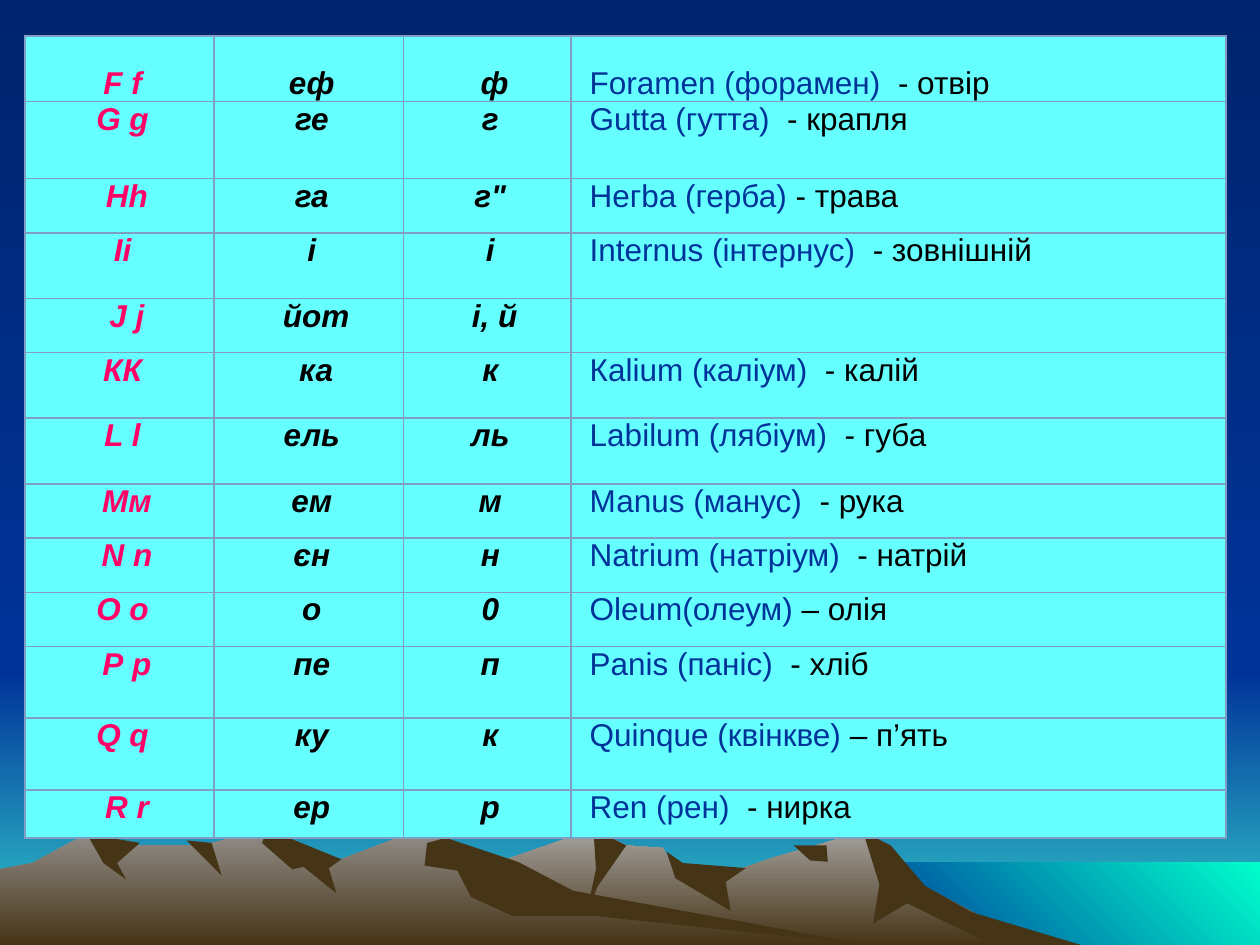
from lxml import etree
from pptx import Presentation
from pptx.dml.color import RGBColor
from pptx.enum import shapes, text
from pptx.oxml.ns import qn
from pptx.util import Pt

COLORS = {
    "night": "00246D", "blue": "003399", "horizon": "33CCCC", "lagoon": "00FFCC",
    "mist": "A5A29F", "stone": "938F8B", "earth": "463416",
    "cell": "66FFFF", "border": "809EC2", "letter": "FF0066", "ink": "000000",
}
GRID_UNIT = Pt(0.72)
DOWN, UP_RIGHT = 270, 45

RIDGES = [
    (("mist", "earth"), [
        (258, 100), (327, 59), (405, 31), (471, 8), (497, 21), (526, 23), (536, 40), (566, 47),
        (613, 31), (685, 10), (723, 48), (821, 100)]),
    (("earth",), [
        (685, 10), (698, 52), (693, 83), (720, 67), (788, 100), (858, 100), (771, 74), (734, 53),
        (707, 21)]),
    (("earth",), [(471, 8), (473, 40), (465, 77), (474, 54), (497, 21)]),
    (("earth",), [(529, 26), (536, 47), (580, 73), (576, 50), (592, 39), (542, 35)]),
    (("earth",), [(630, 21), (643, 33), (657, 34), (656, 21)]),
    (("stone", "earth"), [
        (0, 100), (0, 40), (26, 35), (68, 12), (94, 21), (160, 21), (212, 8), (236, 31),
        (271, 32), (318, 14), (354, 15), (432, 62), (690, 100)]),
    (("earth",), [(208, 19), (232, 40), (241, 38), (267, 59), (261, 39), (271, 32), (212, 8)]),
    (("earth",), [
        (339, 19), (337, 37), (363, 41), (374, 62), (407, 77), (472, 77), (690, 100), (455, 57),
        (411, 34), (354, 15)]),
    (("earth",), [(148, 17), (176, 45), (168, 19)]),
    (("earth",), [(77, 26), (82, 35), (100, 48), (93, 35), (111, 19), (69, 12)]),
]

COLUMNS = [108, 108.3, 95.7, 374.3]
HEIGHTS = {"low": 27.5, "normal": 31, "high": 37.5, "tall": 41, "top": 44}
LETTERS = [
    ("high", "F f ", "еф ", "ф", "Foramen (форамен)", "  - отвір"),
    ("top", "G g ", "ге ", "г ", "Gutta (гутта)", "  - крапля"),
    ("normal", "Нh", "га ", "г\" ", "Негbа (герба)", " - трава"),
    ("high", "Іі ", "і ", "і ", "Internus (інтернус)", "  - зовнішній"),
    ("normal", "J j", "йот", "і, й", "", ""),
    ("high", "КК ", "ка", "к ", "Каlium (каліум)", "  - калій"),
    ("high", "L l ", "ель ", "ль ", "Labilum (лябіум)", "  - губа"),
    ("normal", "Мм", "ем ", "м ", "Маnus (манус)", "  - рука"),
    ("normal", "N n", "єн ", "н ", "Natrium (натріум)", "  - натрій"),
    ("normal", "О о ", "о ", "0 ", "Oleum(олеум)", " – олія "),
    ("tall", "Р р", "пе ", "п ", "Рanis (паніс)", "  - хліб"),
    ("tall", "Q q ", "ку ", "к ", "Quinque (квінкве)", " – п’ять "),
    ("low", "R r", "ер ", "р ", "Ren (рен)", "  - нирка"),
]


def color(name):
    return RGBColor.from_string(COLORS[name])


def paint(fill, start, end=None, angle=DOWN):
    if end is None:
        fill.solid()
        fill.fore_color.rgb = color(start)
        return
    fill.gradient()
    fill.gradient_angle = angle
    for stop, name in zip(fill.gradient_stops, (start, end)):
        stop.color.rgb = color(name)


def finish(shape, *paints):
    shape.shadow.inherit = False
    shape.line.fill.background()
    paint(shape.fill, *paints)


def add_band(page, box, *paints):
    band = page.shapes.add_shape(shapes.MSO_SHAPE.RECTANGLE, *map(Pt, box))
    finish(band, *paints)


def add_mountains(page, left, top):
    for paints, points in RIDGES:
        builder = page.shapes.build_freeform(*points[0], scale=GRID_UNIT)
        builder.add_line_segments(points[1:], close=True)
        finish(builder.convert_to_shape(Pt(left), Pt(top)), *paints)


def add_borders(cell):
    properties = cell._tc.get_or_add_tcPr()
    for index, side in enumerate(("lnL", "lnR", "lnT", "lnB")):
        line = etree.Element(qn("a:" + side), w=str(Pt(1)))
        solid = etree.SubElement(line, qn("a:solidFill"))
        etree.SubElement(solid, qn("a:srgbClr"), val=COLORS["border"])
        properties.insert(index, line)


def fill_cell(cell, spans, emphasis, align, anchor):
    cell.margin_left = cell.margin_right = Pt(2.16)
    cell.margin_top = cell.margin_bottom = 0
    cell.vertical_anchor = anchor
    paint(cell.fill, "cell")
    add_borders(cell)
    para = cell.text_frame.paragraphs[0]
    para.alignment = align
    para._p.get_or_add_pPr().set("marL", str(Pt(8.64)))
    para.font.name = "Arial"
    para.font.size = Pt(18)
    para.font.bold = para.font.italic = emphasis
    for words, name in spans:
        if words:
            span = para.add_run()
            span.text = words
            span.font.color.rgb = color(name)


def add_alphabet(page, left, top):
    height = sum(HEIGHTS[row[0]] for row in LETTERS)
    frame = page.shapes.add_table(len(LETTERS), len(COLUMNS), Pt(left), Pt(top),
                                  Pt(sum(COLUMNS)), Pt(height))
    table = frame.table
    table.first_row = table.horz_banding = False
    for column, width in zip(table.columns, COLUMNS):
        column.width = Pt(width)
    for index, (size, letter, name, sound, latin, meaning) in enumerate(LETTERS):
        row = table.rows[index]
        row.height = Pt(HEIGHTS[size])
        anchor = text.MSO_ANCHOR.TOP if index else text.MSO_ANCHOR.BOTTOM
        contents = [[(letter, "letter")], [(name, "ink")], [(sound, "ink")],
                    [(latin, "blue"), (meaning, "ink")]]
        for position, spans in enumerate(contents):
            example = position == 3
            align = text.PP_ALIGN.JUSTIFY if example else text.PP_ALIGN.CENTER
            fill_cell(row.cells[position], spans, not example, align, anchor)


def build_page(deck):
    page = deck.slides.add_slide(deck.slide_layouts[6])
    paint(page.background.fill, "night", "blue")
    add_band(page, (0, 384, 720, 156), "blue", "horizon")
    add_band(page, (0, 0, 720, 384), "night", "blue")
    add_band(page, (492, 493, 228, 47), "blue", "lagoon", UP_RIGHT)
    add_mountains(page, 0, 468)
    add_alphabet(page, 14.2, 20.6)


def main():
    deck = Presentation()
    deck.slide_width, deck.slide_height = Pt(720), Pt(540)
    build_page(deck)
    deck.save("out.pptx")


if __name__ == "__main__":
    main()
